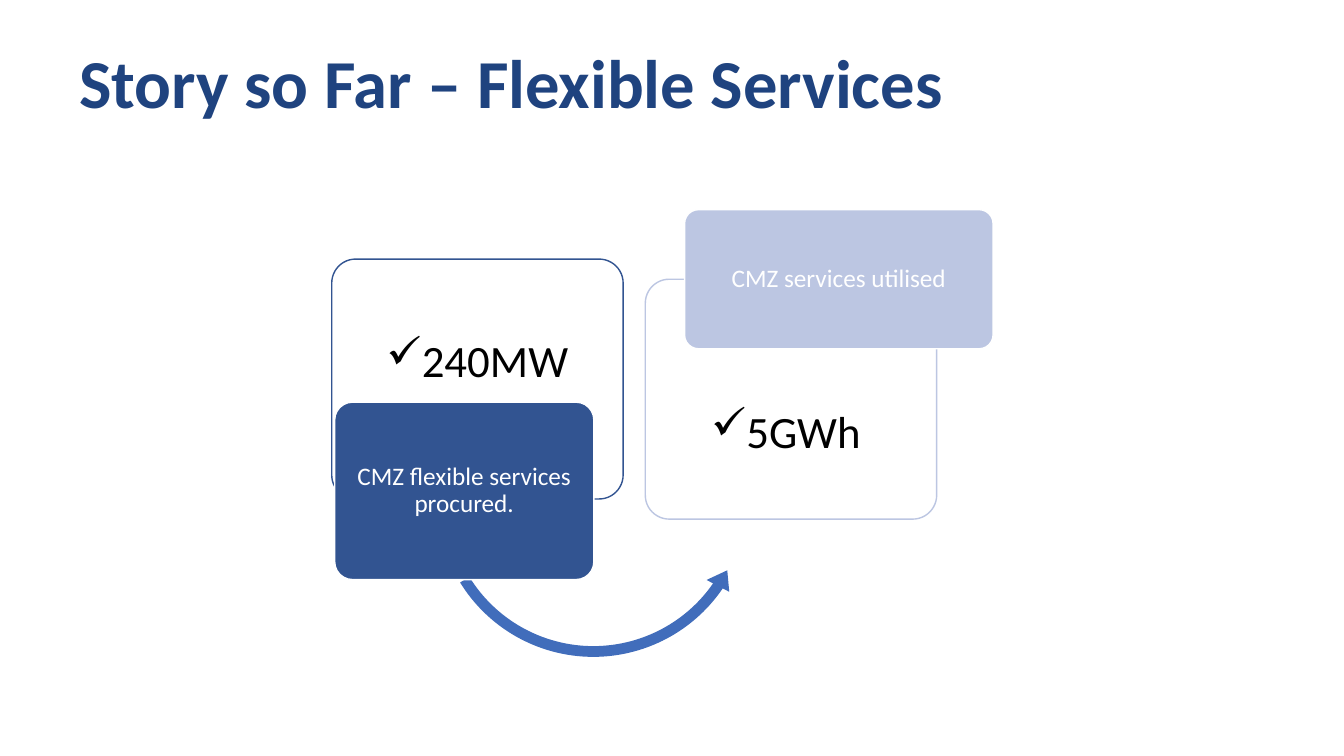
from lxml import etree
from pptx import Presentation
from pptx.dml.color import RGBColor
from pptx.enum.shapes import MSO_SHAPE
from pptx.enum.text import MSO_ANCHOR, PP_ALIGN
from pptx.oxml.ns import qn
from pptx.util import Inches, Pt

NAVY, PALE, WHITE = "325491", "BCC6E2", "FFFFFF"


def color(value):
    return RGBColor.from_string(value)


def write(tf, text, size, fill, bold=False, align=PP_ALIGN.CENTER,
          anchor=MSO_ANCHOR.MIDDLE, spacing=0.9, margins=(0.1, 0.05, 0.1, 0.05),
          bullet=None):
    """Put one paragraph into tf; margins are left, top, right, bottom."""
    tf.word_wrap = True
    tf.vertical_anchor = anchor
    (tf.margin_left, tf.margin_top,
     tf.margin_right, tf.margin_bottom) = map(Inches, margins)
    p = tf.paragraphs[0]
    p.alignment = align
    p.line_spacing = spacing
    if bullet:
        pPr = p._p.get_or_add_pPr()
        pPr.set("marL", str(Inches(0.31)))
        pPr.set("indent", str(-Inches(0.31)))
        etree.SubElement(pPr, qn("a:buChar")).set("char", bullet)
    r = p.add_run()
    r.text = text
    r.font.name = "Calibri"
    r.font.size = Pt(size)
    r.font.bold = bold
    r.font.color.rgb = color(fill)


class Deck:
    def __init__(self):
        self.prs = Presentation()
        self.prs.slide_width, self.prs.slide_height = Inches(13.33), Inches(7.5)
        self.s = self.prs.slides.add_slide(self.prs.slide_layouts[6])

    def title(self, text, box):
        sp = self.s.shapes.add_textbox(*map(Inches, box))
        write(sp.text_frame, text, 49, "1F437F", bold=True, align=PP_ALIGN.LEFT)

    def shape(self, kind, box, fill, line=None, adjustments=()):
        sp = self.s.shapes.add_shape(kind, *map(Inches, box))
        sp.shadow.inherit = False
        sp.fill.solid()
        sp.fill.fore_color.rgb = color(fill)
        if line:
            sp.line.color.rgb = color(line)
            sp.line.width = Pt(1)
        else:
            sp.line.fill.background()
        for i, value in enumerate(adjustments):
            sp.adjustments[i] = value
        return sp

    def card(self, text, left, top, line, text_top):
        """Draw an outlined card with a ticked figure."""
        sp = self.shape(MSO_SHAPE.ROUNDED_RECTANGLE, (left, top, 2.89, 2.38),
                        WHITE, line, [0.1])
        write(sp.text_frame, text, 32, "000000", anchor=MSO_ANCHOR.TOP, spacing=2,
              margins=(0.13, text_top, 0.13, 0.13), bullet="✓")

    def label(self, text, box, fill):
        sp = self.shape(MSO_SHAPE.ROUNDED_RECTANGLE, box, fill, WHITE, [0.1])
        write(sp.text_frame, text, 18, WHITE, margins=(0.04, 0.03, 0.04, 0.03))

    def arrow(self, box, fill, adjustments):
        self.shape(MSO_SHAPE.LEFT_CIRCULAR_ARROW, box, fill, adjustments=adjustments)


def main():
    deck = Deck()
    deck.title("Story so Far – Flexible Services", (0.69, 0.62, 11.14, 0.48))
    deck.card("240MW", 3.29, 2.57, NAVY, text_top=0.13)
    deck.arrow((4.26, 3.34, 3.25, 3.25), "416DBB",
               [0.033, 4.132, 20.66, 89.019, 0.039])
    deck.label("CMZ flexible services procured.", (3.32, 3.99, 2.57, 1.76), NAVY)
    deck.card("5GWh ", 6.4, 2.77, PALE, text_top=0.63)
    deck.label("CMZ services utilised", (6.79, 2.08, 3.06, 1.38), PALE)
    deck.prs.save("out.pptx")


if __name__ == "__main__":
    main()
